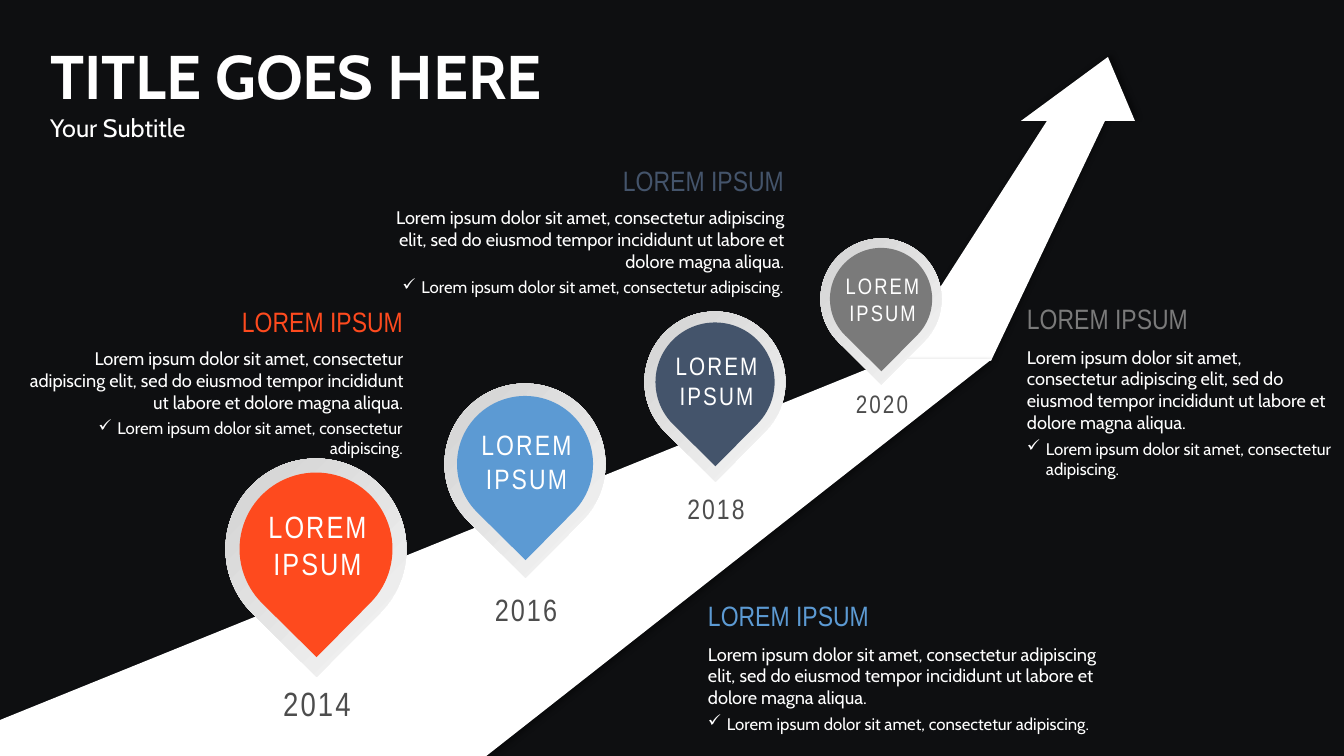
from pptx import Presentation
from pptx import util as u
from pptx.dml.color import RGBColor
from pptx.enum import shapes, text
from pptx.oxml import parse_xml
from pptx.oxml.ns import nsdecls, qn

HEADING = "LOREM IPSUM"
BODY = ("Lorem ipsum dolor sit amet, consectetur adipiscing elit, sed do "
        "eiusmod tempor incididunt ut labore et dolore magna aliqua.")
CHECK = "Lorem ipsum dolor sit amet, consectetur adipiscing."
TITLE = ["TITLE GOES HERE", "Your Subtitle"]
TITLE_BOX = (40, 33, 655, 115)
LABEL = ["LOREM", "IPSUM"]

MILESTONES = [
    dict(year="2020", color="gray", center=(881, 299), year_top=385,
         note=(1017, 296, 327, 188), align="LEFT"),
    dict(year="2018", color="navy", center=(715, 382), year_top=489,
         note=(379, 158, 415, 146), align="RIGHT"),
    dict(year="2016", color="blue", center=(525, 464), year_top=588,
         note=(698, 593, 435, 146), align="LEFT"),
    dict(year="2014", color="orange", center=(316, 549), year_top=680,
         note=(19, 299, 394, 166), align="RIGHT"),
]
ARROW = [
    dict(points=[(1108, 57), (1135, 121), (1105, 121), (991, 361),
                 (893, 361), (1047, 121), (1021, 121)], shadow_angle=315),
    dict(points=[(892, 359), (992, 359), (485, 757), (0, 757), (0, 720)],
         shadow_angle=45),
]
THEME = dict(
    back="0E0F11", white="FFFFFF", year="4D4D4D", shadow="000000",
    gray="7A7A7A", navy="44546B", blue="5C9AD3", orange="FE4A1E",
    rim=[(0, "FAFAFA"), (74, "D7D7D7"), (83, "D7D7D7"), (100, "E4E4E4")],
    font="Cabin", narrow="Arial Narrow",
    title=44, subtitle=18, heading=20, body=13, check=12, label=16, pin_year=18,
)
PX = 914400 / 100.8
PIN_TURN = 134.7
GAP_AFTER_HEADING = dict(LEFT=8, RIGHT=7)
GAP_BEFORE_CHECK = 3.6


def px(*values):
    return [u.Emu(round(v * PX)) for v in values]


def rgb(name):
    return RGBColor.from_string(THEME[name])


def add_text_box(parent, box, inset=(10, 5)):
    tf = parent.add_textbox(*px(*box)).text_frame
    tf.word_wrap = True
    tf.margin_left = tf.margin_right = px(inset[0])[0]
    tf.margin_top = tf.margin_bottom = px(inset[1])[0]
    return tf


def add_line(tf, words, size, color, font, align="LEFT", bold=False,
             before=0, spacing=0, check=False):
    p = tf.paragraphs[0]
    if p.runs:
        p = tf.add_paragraph()
    if check:
        pPr = p._p.get_or_add_pPr()
        indent = px(19)[0]
        pPr.set("marL", str(indent))
        pPr.set("indent", str(-indent))
        pPr.append(parse_xml(f'<a:buChar {nsdecls("a")} char="✓"/>'))
    p.alignment = getattr(text.PP_ALIGN, align)
    if before:
        p.space_before = u.Pt(before)
    r = p.add_run()
    r.text = words
    r.font.size = u.Pt(size)
    r.font.name = THEME[font]
    r.font.bold = bold
    r.font.color.rgb = rgb(color)
    if spacing:
        r._r.get_or_add_rPr().set("spc", str(spacing))


def add_arrow_part(s, points, shadow_angle):
    builder = s.shapes.build_freeform(*points[0], scale=PX)
    builder.add_line_segments(points[1:], close=True)
    sp = builder.convert_to_shape()
    sp.fill.solid()
    sp.fill.fore_color.rgb = rgb("white")
    sp.line.fill.background()
    sp.shadow.inherit = False
    sp._element.spPr.find(qn("a:effectLst")).append(parse_xml(
        f'<a:outerShdw {nsdecls("a")} blurRad="{u.Pt(4)}" dist="{u.Pt(3)}" '
        f'dir="{shadow_angle * 60000}" rotWithShape="0">'
        f'<a:srgbClr val="{THEME["shadow"]}"><a:alpha val="40000"/></a:srgbClr>'
        '</a:outerShdw>'))


def add_drop(parent, center, size):
    cx, cy = center
    sp = parent.add_shape(shapes.MSO_SHAPE.TEAR,
                          *px(cx - size / 2, cy - size / 2, size, size))
    sp.rotation = PIN_TURN
    sp.line.fill.background()
    sp.shadow.inherit = False
    return sp


def fill_rim(sp):
    sp.fill.gradient()
    spPr = sp._element.spPr
    stops = "".join(f'<a:gs pos="{pos * 1000}"><a:srgbClr val="{color}"/></a:gs>'
                    for pos, color in THEME["rim"])
    spPr.replace(spPr.find(qn("a:gradFill")), parse_xml(
        f'<a:gradFill {nsdecls("a")} rotWithShape="1"><a:gsLst>{stops}</a:gsLst>'
        '<a:lin ang="5400000" scaled="0"/></a:gradFill>'))


def add_pin(s, step, item):
    size = 121 + 20 * step
    cx, cy = item["center"]
    group = s.shapes.add_group_shape().shapes
    fill_rim(add_drop(group, (cx, cy), size))
    core = add_drop(group, (cx, cy), size * 0.845)
    core.fill.solid()
    core.fill.fore_color.rgb = rgb(item["color"])
    width = 98 + 16 * step
    tf = add_text_box(group, (cx + 1.5 - width / 2, cy - 0.245 * size,
                              width, 61 + 7 * step), (7, 3))
    for words in LABEL:
        add_line(tf, words, THEME["label"] + 2 * step, "white", "narrow",
                 "CENTER", spacing=150)


def add_year(s, step, item):
    width = 100 + 4 * step
    tf = add_text_box(s.shapes, (item["center"][0] + 1 - width / 2,
                                 item["year_top"], width, 37 + 3 * step), (7, 3))
    add_line(tf, item["year"], THEME["pin_year"] + 2 * step, "year", "narrow",
             "CENTER", spacing=150)


def add_note(s, item):
    align = item["align"]
    tf = add_text_box(s.shapes, item["note"])
    add_line(tf, HEADING, THEME["heading"], item["color"], "narrow", align)
    add_line(tf, BODY, THEME["body"], "white", "font", align,
             before=GAP_AFTER_HEADING[align])
    add_line(tf, CHECK, THEME["check"], "white", "font", align,
             before=GAP_BEFORE_CHECK, check=True)


def main():
    prs = Presentation()
    prs.slide_width, prs.slide_height = px(1344, 756)
    s = prs.slides.add_slide(prs.slide_layouts[6])
    s.background.fill.solid()
    s.background.fill.fore_color.rgb = rgb("back")

    tf = add_text_box(s.shapes, TITLE_BOX)
    add_line(tf, TITLE[0], THEME["title"], "white", "font", bold=True)
    add_line(tf, TITLE[1], THEME["subtitle"], "white", "font")

    for part in ARROW:
        add_arrow_part(s, **part)
    for step, item in enumerate(MILESTONES):
        add_year(s, step, item)
        add_note(s, item)
    for step, item in enumerate(MILESTONES):
        add_pin(s, step, item)
    prs.save("out.pptx")


if __name__ == "__main__":
    main()
